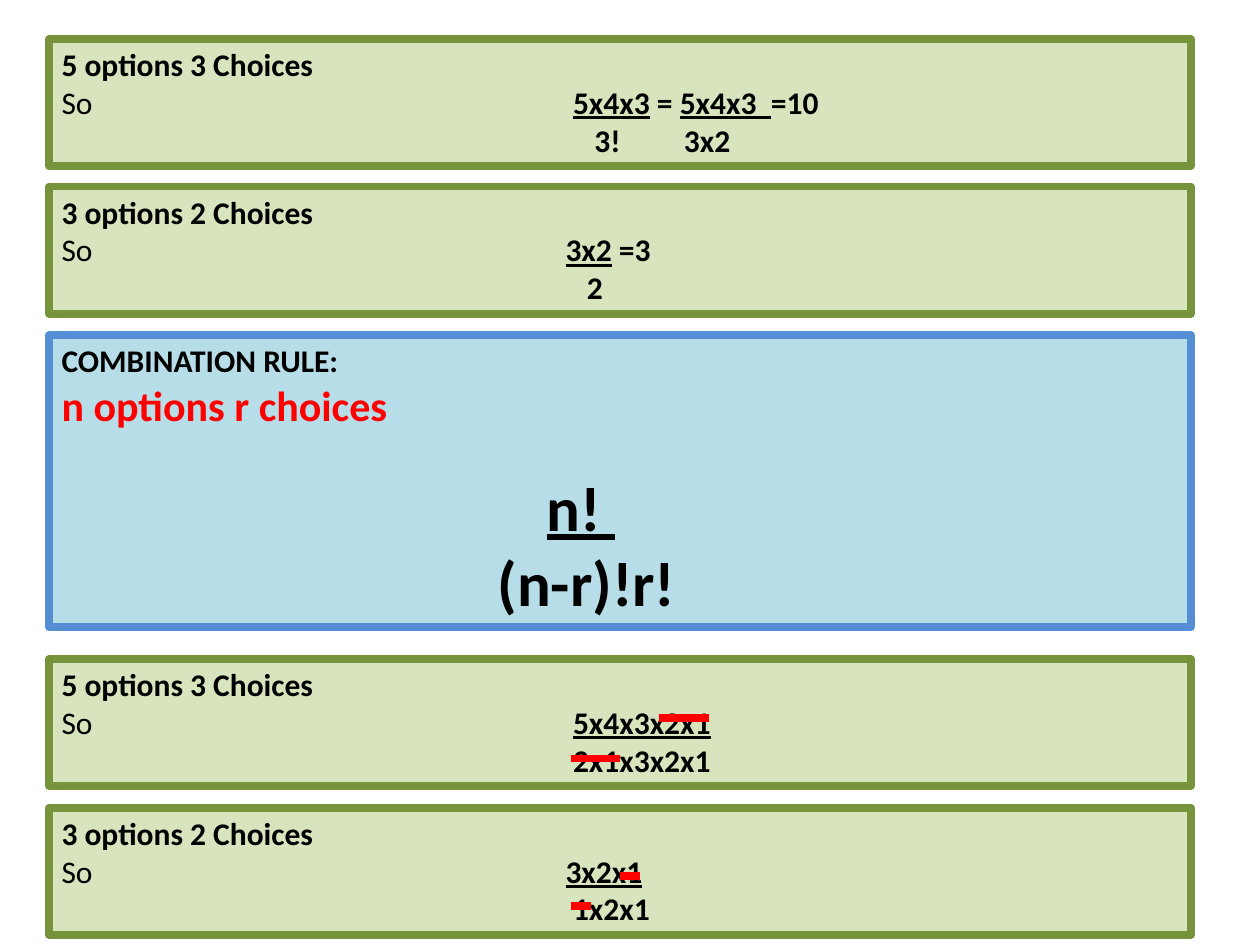
import pptx
import pptx.util
import pptx.dml.color
import pptx.enum.shapes
import pptx.enum.text
import pptx.oxml
import pptx.oxml.ns
from lxml import etree

Inches, Pt = pptx.util.Inches, pptx.util.Pt
COLOURS = {
    "example": "D7E4BD", "example edge": "77933C",
    "rule": "B7DEE8", "rule edge": "558ED5",
    "text": "000000", "accent": "FF0000",
}


def rgb(name):
    return pptx.dml.color.RGBColor.from_string(COLOURS[name])


def add_line(frame, spans, stops=(), size=18, colour="text", bold=True, gap=0):
    """Add a paragraph of (text, underlined) spans, with tab stops in inches."""
    first = not frame.paragraphs[0].runs
    para = frame.paragraphs[0] if first else frame.add_paragraph()
    para.alignment = pptx.enum.text.PP_ALIGN.LEFT
    para.space_before = Pt(gap)
    para.font.name = "Calibri"
    para.font.size = Pt(size)
    para.font.bold = bold
    para.font.color.rgb = rgb(colour)
    properties = para._p.get_or_add_pPr()
    if stops:
        tabs = etree.Element(pptx.oxml.ns.qn("a:tabLst"))
        for stop in stops:
            etree.SubElement(tabs, pptx.oxml.ns.qn("a:tab"),
                             pos=str(Inches(stop)), algn="l")
        properties.find(pptx.oxml.ns.qn("a:defRPr")).addprevious(tabs)
    for text, underlined in spans:
        span = para.add_run()
        span.text = text
        if underlined:
            span.font.underline = True
        if text.startswith("So"):
            span.font.bold = False


deck = pptx.Presentation()
deck.slide_width, deck.slide_height = Inches(10), Inches(7.5)
page = deck.slides.add_slide(deck.slide_layouts[6])

# Each line: spans, then the options of add_line
five_heading = ([("5 options 3 Choices", False)], {})
three_heading = ([("3 options 2 Choices", False)], {})
panels = [
    (0.31, 1.01, "example", [
        five_heading,
        ([("So\t", False), ("5x4x3", True), (" = ", False),
          ("5x4x3  ", True), ("=10", False)], {"stops": [4.06]}),
        ([("\t3!\t3x2", False)], {"stops": [4.23, 4.94]}),
    ]),
    (1.48, 1.01, "example", [
        three_heading,
        ([("So\t", False), ("3x2", True), (" =3", False)], {"stops": [4]}),
        ([("\t2", False)], {"stops": [4.17]}),
    ]),
    (2.66, 2.32, "rule", [
        ([("COMBINATION RULE:", False)], {}),
        ([("n options r choices", False)], {"size": 24, "colour": "accent"}),
        ([("\t", False), ("n! ", True)],
         {"stops": [3.85], "size": 36, "gap": 22}),
        ([("\t(n-r)!r!", False)], {"stops": [3.46], "size": 36}),
    ]),
    (5.23, 1.01, "example", [
        five_heading,
        ([("So\t", False), ("5x4x3x2x1", True)], {"stops": [4.06]}),
        ([("\t2x1x3x2x1", False)], {"stops": [4.06]}),
    ]),
    (6.41, 1.01, "example", [
        three_heading,
        ([("So\t", False), ("3x2x1", True)], {"stops": [4]}),
        ([("\t1x2x1", False)], {"stops": [4.06]}),
    ]),
]

for top, height, kind, lines in panels:
    box = page.shapes.add_shape(
        pptx.enum.shapes.MSO_SHAPE.RECTANGLE,
        Inches(0.39), Inches(top), Inches(9.06), Inches(height))
    box.shadow.inherit = False
    box.fill.solid()
    box.fill.fore_color.rgb = rgb(kind)
    box.line.color.rgb = rgb(kind + " edge")
    box.line.width = Pt(4.5)
    frame = box.text_frame
    frame.word_wrap = True
    frame.vertical_anchor = pptx.enum.text.MSO_ANCHOR.TOP
    for spans, options in lines:
        add_line(frame, spans, **options)

# Strokes through the cancelled factors: left, right, height on the page
for left, right, y in [(5.23, 5.63, 5.7), (4.53, 4.92, 6.02),
                       (4.92, 5.08, 6.95), (4.53, 4.69, 7.19)]:
    strike = page.shapes.add_connector(
        pptx.enum.shapes.MSO_CONNECTOR.STRAIGHT,
        Inches(left), Inches(y), Inches(right), Inches(y))
    strike.line.color.rgb = rgb("accent")
    strike.line.width = Pt(4.5)
    etree.SubElement(strike._element.spPr, pptx.oxml.ns.qn("a:effectLst"))

deck.save("out.pptx")
